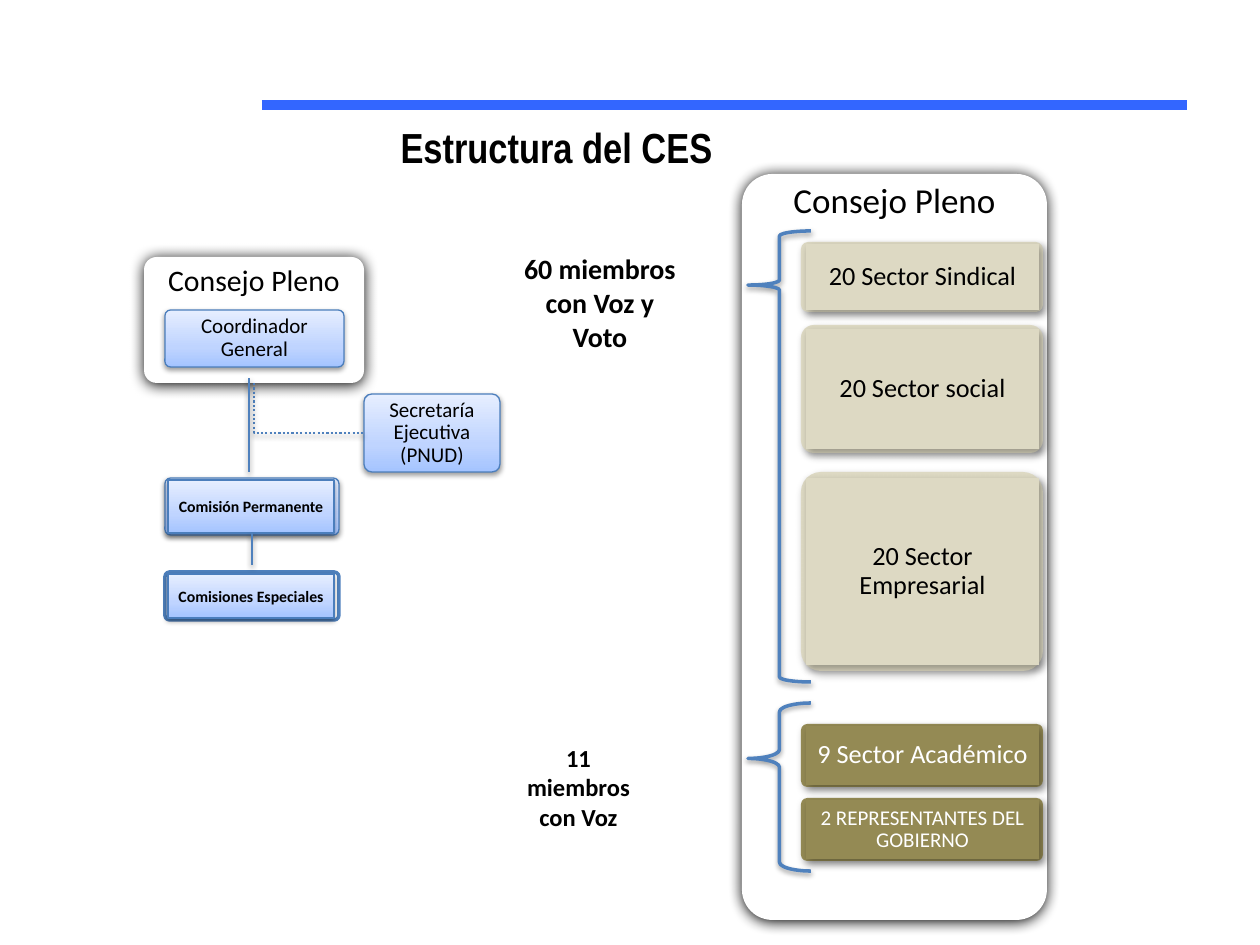
from lxml import etree
from pptx import Presentation
from pptx.dml.color import RGBColor
from pptx.enum.dml import MSO_LINE
from pptx.enum.shapes import MSO_CONNECTOR, MSO_SHAPE
from pptx.enum.text import MSO_ANCHOR, MSO_AUTO_SIZE, PP_ALIGN
from pptx.oxml.ns import qn
from pptx.util import Pt

ROUND, RECT = MSO_SHAPE.ROUNDED_RECTANGLE, MSO_SHAPE.RECTANGLE
BRACE = MSO_SHAPE.LEFT_BRACE
LINE, ELBOW = MSO_CONNECTOR.STRAIGHT, MSO_CONNECTOR.ELBOW
DOTS = MSO_LINE.ROUND_DOT
TOP, MIDDLE = MSO_ANCHOR.TOP, MSO_ANCHOR.MIDDLE
CENTER = PP_ALIGN.CENTER
FIXED = MSO_AUTO_SIZE.NONE

BLACK, WHITE = "000000", "FFFFFF"
BLUE, EDGE, RULE = "4F81BD", "4B7EBC", "3366FF"
SAND, OLIVE = "DDD9C3", "948A54"
FADE = [(0, "A4C4FF"), (35, "BFD4FF"), (100, "E6EEFF")]
SOFT = (38, 3.1, 1.6, 90)
DEEP = (100, 8.5, 1, 90)
SLANT = (30, 4.5, 2.6, 53)


def px(n):
    return round(n * 914400 / 126)


def rgb(code):
    return RGBColor.from_string(code)


def shade(effects, alpha, blur, gap, angle):
    cast = etree.SubElement(
        effects, qn("a:outerShdw"), blurRad=str(Pt(blur)), dist=str(Pt(gap)),
        dir=str(angle * 60000), algn="ctr", rotWithShape="0")
    tint = etree.SubElement(cast, qn("a:srgbClr"), val=BLACK)
    etree.SubElement(tint, qn("a:alpha"), val=str(alpha * 1000))


def fade(shape):
    shape.fill.gradient()
    shape.fill.gradient_angle = 90
    stops = shape._element.spPr.find(".//" + qn("a:gsLst"))
    for old in list(stops):
        stops.remove(old)
    for spot, code in FADE:
        stop = etree.SubElement(stops, qn("a:gs"), pos=str(spot * 1000))
        etree.SubElement(stop, qn("a:srgbClr"), val=code)


def stroke(line, color, width):
    line.color.rgb = rgb(color)
    line.width = Pt(width)


def box(slide, kind, area, fill=None, edge=None, width=0.75, shadow=None,
        adjust=()):
    shape = slide.shapes.add_shape(kind, *map(px, area))
    for i, value in enumerate(adjust):
        shape.adjustments[i] = value
    if fill is FADE:
        fade(shape)
    elif fill:
        shape.fill.solid()
        shape.fill.fore_color.rgb = rgb(fill)
    else:
        shape.fill.background()
    if edge:
        stroke(shape.line, edge, width)
    else:
        shape.line.fill.background()
    shape.shadow.inherit = False
    if shadow:
        shade(shape._element.spPr.find(qn("a:effectLst")), *shadow)
    return shape


def write(shape, text, size=12, color=BLACK, bold=False, font="Calibri",
          anchor=MIDDLE, pad=(9, 9), space=0.9, shadow=None):
    frame = shape.text_frame
    frame.word_wrap = True
    frame.auto_size = FIXED
    frame.vertical_anchor = anchor
    frame.margin_left = frame.margin_right = px(pad[0])
    frame.margin_top = frame.margin_bottom = px(pad[1])
    para = frame.paragraphs[0]
    para.alignment = CENTER
    para.line_spacing = space
    run = para.add_run()
    run.text = text
    run.font.size = Pt(size)
    run.font.bold = bold
    run.font.color.rgb = rgb(color)
    run.font.name = font
    if shadow:
        effects = etree.Element(qn("a:effectLst"))
        run.font._element.find(qn("a:solidFill")).addnext(effects)
        shade(effects, *shadow)


def label(slide, area, text, **style):
    write(slide.shapes.add_textbox(*map(px, area)), text, **style)


def panel(slide, area, inset, text, size, round_by):
    x, y, w, h = area
    box(slide, ROUND, area, WHITE, shadow=DEEP, adjust=[round_by])
    label(slide, (x + inset, y, w - 2 * inset, h), text, size=size,
          anchor=TOP, shadow=SLANT)


def node(slide, area, text):
    x, y, w, h = area
    box(slide, ROUND, area, FADE, EDGE, shadow=SOFT, adjust=[0.1])
    label(slide, (x + 2, y + 2, w - 4, h - 4), text)


def card(slide, y, h, text, fill, color, size=15):
    x, w = 801, 242
    gap = round(h * 0.03)
    box(slide, ROUND, (x, y, w, h), fill, shadow=SLANT, adjust=[0.1])
    face = box(slide, RECT, (x + 5, y + gap, w - 9, h - 2 * gap), fill,
               shadow=SLANT)
    write(face, text, size=size, color=color)


def unit(slide, y, h, text, **frame):
    box(slide, ROUND, (165, y, 174, h), adjust=[0.1], **frame)
    face = box(slide, RECT, (168, y + 2, 166, h - 4), FADE, EDGE, shadow=SOFT)
    write(face, text, size=9, bold=True, pad=(6, 6), space=1)


def link(slide, start, end, color=BLUE, width=1.25, kind=LINE, shadow=SOFT):
    wire = slide.shapes.add_connector(kind, *map(px, start + end))
    stroke(wire.line, color, width)
    effects = etree.SubElement(wire._element.spPr, qn("a:effectLst"))
    if shadow:
        shade(effects, *shadow)
    return wire


def bend(slide, start, end):
    wide, high = end[0] - start[0], end[1] - start[1]
    mid_x, mid_y = (start[0] + end[0]) / 2, (start[1] + end[1]) / 2
    wire = link(slide, (mid_x + high / 2, mid_y - wide / 2),
                (mid_x - high / 2, mid_y + wide / 2), kind=ELBOW)
    wire.line.dash_style = DOTS
    props = wire._element.spPr
    props.find(qn("a:xfrm")).set("rot", str(270 * 60000))
    props.find(qn("a:prstGeom")).set("prst", "bentConnector2")


def main():
    deck = Presentation()
    deck.slide_width, deck.slide_height = px(1260), px(945)
    slide = deck.slides.add_slide(deck.slide_layouts[5])

    title = slide.shapes.title
    title.left, title.top, title.width, title.height = map(
        px, (273, 116, 567, 63))
    write(title, "Estructura del CES", size=24, bold=True,
          font="Arial Narrow", anchor=TOP, pad=(13, 6), space=1)
    link(slide, (262, 105), (1187, 105), RULE, 6, shadow=None)

    panel(slide, (144, 257, 220, 126), 4, "Consejo Pleno", 17, 0.1)
    node(slide, (364, 394, 136, 78), "Secretaría Ejecutiva (PNUD)")
    bend(slide, (254, 383), (364, 433))
    node(slide, (165, 310, 179, 57), "Coordinador General")
    link(slide, (249, 378), (249, 472))

    panel(slide, (742, 174, 305, 746), 6, "Consejo Pleno", 20, 0.1)
    for y, h, text in [(242, 70, "20 Sector Sindical"),
                       (325, 128, "20 Sector social"),
                       (472, 199, "20 Sector Empresarial")]:
        card(slide, y, h, text, SAND, BLACK)
    card(slide, 724, 63, "9 Sector Académico", OLIVE, WHITE)
    card(slide, 798, 63, "2 REPRESENTANTES DEL GOBIERNO", OLIVE, WHITE, 12)

    for y, h, adjust in [(231, 451, (0.08, 0.12)), (703, 168, (0.14, 0.33))]:
        box(slide, BRACE, (748, y, 63, h), edge=BLUE, width=2, shadow=SOFT,
            adjust=adjust)
    for area, text, size in [
            ((512, 247, 176, 145), "60 miembros con Voz y Voto", 16),
            ((505, 738, 147, 98), "11 miembros con Voz", 14)]:
        label(slide, area, text, size=size, bold=True, anchor=TOP,
              pad=(9, 5), space=1)

    unit(slide, 572, 48, "Comisiones Especiales", fill=WHITE, edge=BLUE,
         width=2)
    unit(slide, 478, 57, "Comisión Permanente", fill=FADE, edge=EDGE,
         shadow=SOFT)
    link(slide, (252, 533), (252, 565))

    deck.save("out.pptx")


if __name__ == "__main__":
    main()
